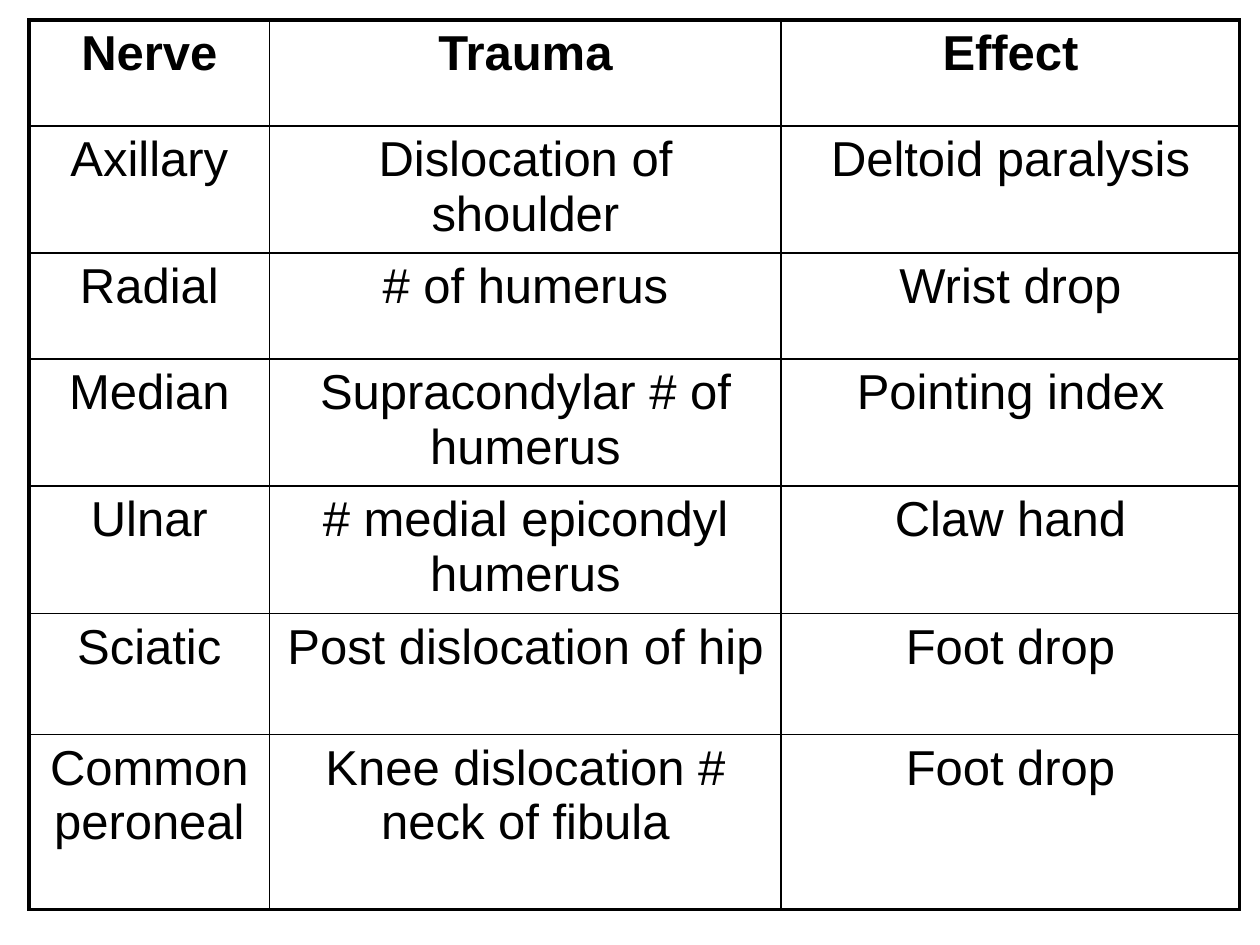
from lxml import etree
from pptx import Presentation
from pptx.dml.color import RGBColor
from pptx.enum.text import PP_ALIGN
from pptx.oxml.ns import qn
from pptx.util import Inches, Pt

CENTER = PP_ALIGN.CENTER
BLACK = RGBColor(0, 0, 0)
THIN, THICK = Pt(1), Pt(2.25)
COL_WIDTHS = [1.91, 4.06, 3.64]
ROW_HEIGHTS = [0.84, 1.01, 0.84, 1.01, 1.01, 0.96, 1.39]
NERVES = [
    ("Nerve", "Trauma", "Effect"),
    ("Axillary", "Dislocation of shoulder", "Deltoid paralysis"),
    ("Radial", "# of humerus", "Wrist drop"),
    ("Median", "Supracondylar # of humerus", "Pointing index"),
    ("Ulnar", "# medial epicondyl humerus", "Claw hand"),
    ("Sciatic", "Post dislocation of hip", "Foot drop"),
    ("Common peroneal", "Knee dislocation # neck of fibula", "Foot drop"),
]


class SlideBuilder:
    """Hold the text style and current slide, and build its elements."""

    def __init__(self, slide, font="Arial", size=28, color=BLACK):
        self.slide = slide
        self.font, self.size, self.color = font, size, color

    def text(self, cell, text, bold):
        p = cell.text_frame.paragraphs[0]
        p.alignment = CENTER
        spacing = etree.SubElement(p._p.get_or_add_pPr(), qn("a:spcBef"))
        etree.SubElement(spacing, qn("a:spcPct"), val="20000")
        r = p.add_run()
        r.text = text
        r.font.name = self.font
        r.font.size = Pt(self.size)
        r.font.bold = bold
        r.font.color.rgb = self.color

    def borders(self, cell, widths):
        tc_pr = cell._tc.get_or_add_tcPr()
        for side, width in widths.items():
            ln = etree.SubElement(tc_pr, qn(f"a:ln{side}"), w=str(width))
            fill = etree.SubElement(ln, qn("a:solidFill"))
            etree.SubElement(fill, qn("a:srgbClr"), val=str(self.color))

    def table(self, left, top, col_widths, row_heights, data):
        n_rows, n_cols = len(row_heights), len(col_widths)
        frame = self.slide.shapes.add_table(
            n_rows, n_cols, Inches(left), Inches(top),
            Inches(sum(col_widths)), Inches(sum(row_heights)))
        tbl = frame.table
        tbl.horz_banding = False
        tbl.first_row = False
        for col, width in zip(tbl.columns, col_widths):
            col.width = Inches(width)
        for i, (row, height) in enumerate(zip(tbl.rows, row_heights)):
            row.height = Inches(height)
            for j, cell in enumerate(row.cells):
                self.text(cell, data[i][j], bold=i == 0)
                self.borders(cell, {
                    "L": THICK if j == 0 else THIN,
                    "R": THICK if j == n_cols - 1 else THIN,
                    "T": THICK if i == 0 else THIN,
                    "B": THICK if i == n_rows - 1 else THIN,
                })
                cell.fill.background()


def main():
    prs = Presentation()
    prs.slide_width, prs.slide_height = Inches(10), Inches(7.5)
    s = SlideBuilder(prs.slides.add_slide(prs.slide_layouts[6]))
    s.table(0.23, 0.16, COL_WIDTHS, ROW_HEIGHTS, NERVES)
    prs.save("out.pptx")


if __name__ == "__main__":
    main()
